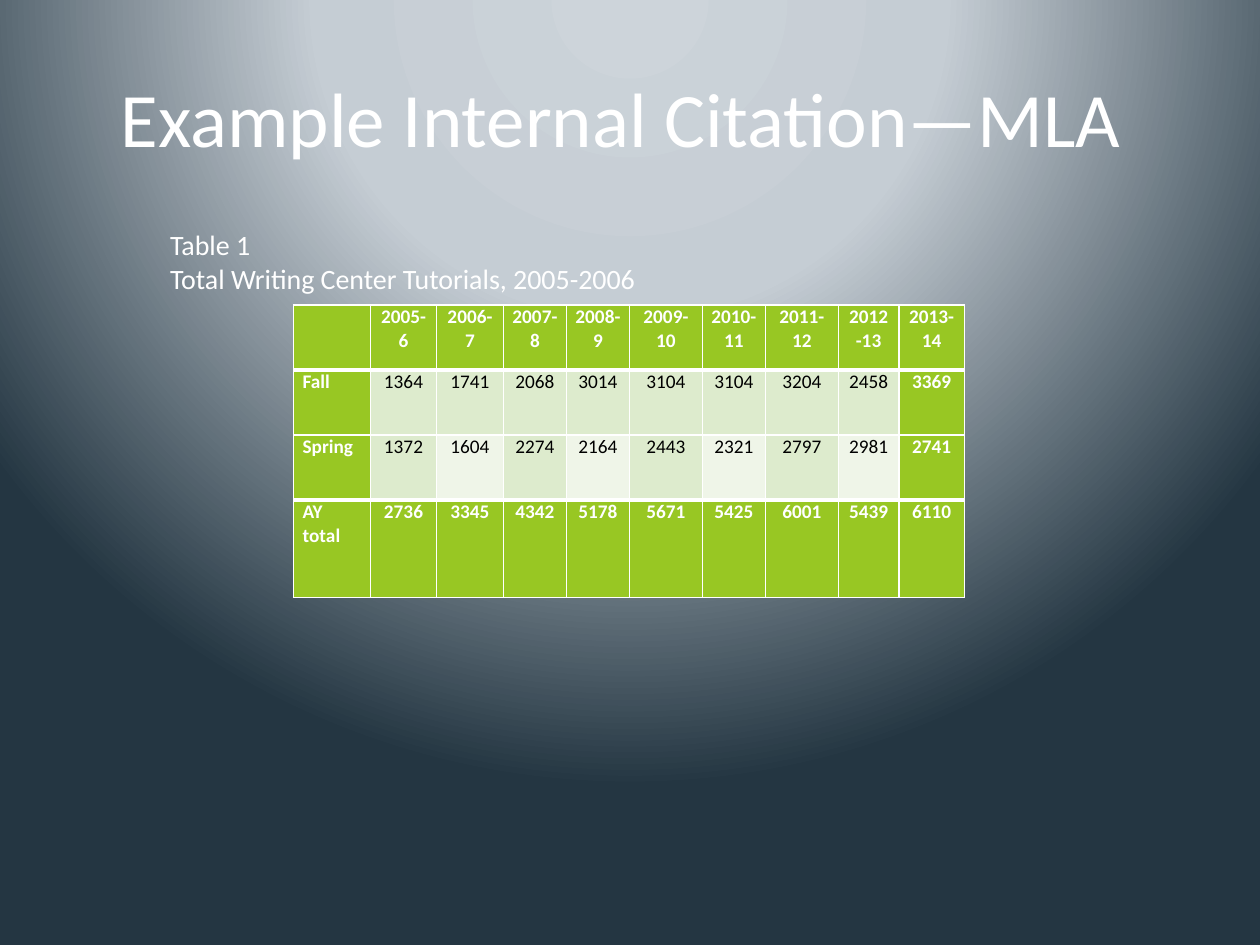
from pptx import Presentation
from pptx.dml.color import RGBColor
from pptx.enum.text import MSO_ANCHOR, PP_ALIGN
from pptx.oxml import parse_xml
from pptx.util import Cm, Pt

TITLE = "Example Internal Citation—MLA "
NOTE = ["Table 1", "Total Writing Center Tutorials, 2005-2006"]
ROWS = [
    ["", "2005-6", "2006-7", "2007-8", "2008-9", "2009-10", "2010-11", "2011-12", "2012-13", "2013-14"],
    ["Fall", "1364", "1741", "2068", "3014", "3104", "3104", "3204", "2458", "3369"],
    ["Spring", "1372", "1604", "2274", "2164", "2443", "2321", "2797", "2981", "2741"],
    ["AY total", "2736", "3345", "4342", "5178", "5671", "5425", "6001", "5439", "6110"],
]
WIDTHS = [1.55, 1.33, 1.35, 1.27, 1.27, 1.47, 1.27, 1.47, 1.22, 1.32]
HEIGHTS = [1.31, 1.31, 1.31, 1.96]
COLORS = {"white": "FFFFFF", "black": "000000", "green": "98C723", "band": "DDEBCD", "pale": "EFF5E8"}
STOPS = [(0, "CDD4DA"), (40, "C5CDD4"), (100, "243642")]
FONT = "Calibri"
NS = "http://schemas.openxmlformats.org/"
A = f'xmlns:a="{NS}drawingml/2006/main"'
P = f'xmlns:p="{NS}presentationml/2006/main"'


def color(name):
    return RGBColor.from_string(COLORS[name])


def style(para, size, tint="white", bold=False, align=PP_ALIGN.LEFT):
    para.alignment = align
    font = para.font
    font.name, font.size, font.bold = FONT, Pt(size), bold
    font.color.rgb = color(tint)


def paint(slide):
    stops = "".join(f'<a:gs pos="{pos * 1000}"><a:srgbClr val="{tint}"/></a:gs>' for pos, tint in STOPS)
    slide.element.cSld.insert(0, parse_xml(
        f'<p:bg {P} {A}><p:bgPr><a:gradFill rotWithShape="1"><a:gsLst>{stops}</a:gsLst>'
        '<a:path path="circle"><a:fillToRect l="50000" t="-80000" r="50000" b="180000"/></a:path>'
        '</a:gradFill><a:effectLst/></p:bgPr></p:bg>'))


def border(cell, row):
    last = len(ROWS) - 1
    top = 3 if row in (1, last) else 1
    foot = 3 if row in (0, last - 1) else 1
    for side, width in zip("LRTB", (1, 1, top, foot)):
        cell._tc.get_or_add_tcPr().append(parse_xml(
            f'<a:ln{side} {A} w="{Pt(width)}"><a:solidFill>'
            f'<a:srgbClr val="{COLORS["white"]}"/></a:solidFill></a:ln{side}>'))


def add_grid(slide):
    frame = slide.shapes.add_table(len(ROWS), len(WIDTHS), Cm(5.92), Cm(6.15),
                                   Cm(sum(WIDTHS)), Cm(sum(HEIGHTS)))
    grid = frame.table
    for col, width in zip(grid.columns, WIDTHS):
        col.width = Cm(width)
    for row, height in zip(grid.rows, HEIGHTS):
        row.height = Cm(height)
    for r, words in enumerate(ROWS):
        for c, word in enumerate(words):
            cell = grid.cell(r, c)
            edge = r in (0, len(ROWS) - 1) or c in (0, len(WIDTHS) - 1)
            pale = r == 2 and c % 2 == 0
            border(cell, r)
            cell.fill.solid()
            cell.fill.fore_color.rgb = color("green" if edge else "pale" if pale else "band")
            cell.margin_left = cell.margin_right = Cm(0.18)
            cell.margin_top = cell.margin_bottom = 0
            cell.text = word
            style(cell.text_frame.paragraphs[0], 11, "white" if edge else "black", edge,
                  PP_ALIGN.CENTER if c else PP_ALIGN.LEFT)


def main():
    deck = Presentation()
    deck.slide_width, deck.slide_height = Cm(25.4), Cm(19.05)
    slide = deck.slides.add_slide(deck.slide_layouts[5])
    paint(slide)
    title = slide.shapes.title
    title.left, title.top, title.width, title.height = Cm(1.27), Cm(0.76), Cm(22.86), Cm(3.18)
    title.text_frame.text = TITLE
    title.text_frame.vertical_anchor = MSO_ANCHOR.MIDDLE
    style(title.text_frame.paragraphs[0], 44, align=PP_ALIGN.CENTER)
    add_grid(slide)
    box = slide.shapes.add_textbox(Cm(3.18), Cm(4.47), Cm(10.01), Cm(1.63))
    box.text_frame.word_wrap = False
    box.text_frame.text = "\n".join(NOTE)
    for para in box.text_frame.paragraphs:
        style(para, 16)
    deck.save("out.pptx")


if __name__ == "__main__":
    main()
